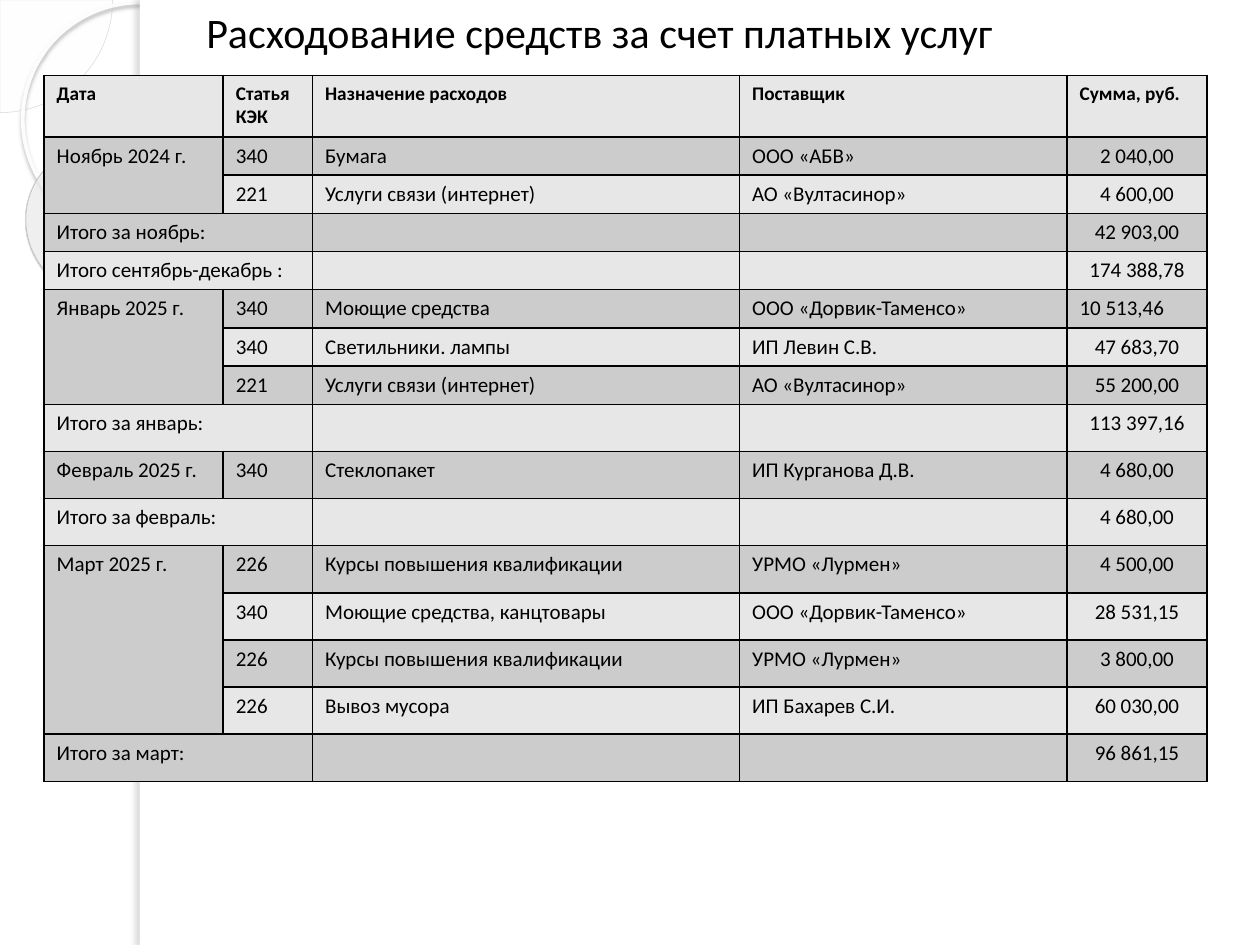
from lxml import etree
from pptx import Presentation
from pptx import util as u
from pptx.dml.color import RGBColor
from pptx.enum import shapes, text
from pptx.oxml import parse_xml
from pptx.oxml.ns import nsdecls, qn

COLORS = {
    "black": "000000", "white": "FFFFFF", "band_light": "E7E7E7", "band_dark": "CCCCCC",
    "pie": "FEFEFE", "pie_line": "D4D4D4", "ring": "FCFCFC", "ring_shadow": "B7B7B7",
    "donut_inner": "FDFDFD", "donut_outer": "DBDBDB", "donut_line": "C7C7C7",
    "donut_shadow": "5B5B5B", "edge_shadow": "7B7B7B",
}
FONT = "Calibri"
COLUMN_WIDTHS = [3.61, 1.8, 8.61, 6.6, 2.82]
HEADER_HEIGHT, LOW_ROW, TALL_ROW = 1.24, 0.77, 0.95
LOW_ROW_COUNT = 7

HEADINGS = ["Дата", "Статья КЭК", "Назначение расходов", "Поставщик", "Сумма, руб."]
# An empty date continues the month above; a pair is a total row.
EXPENSES = [
    ("Ноябрь 2024 г.", "340", "Бумага", "ООО «АБВ»", "2 040,00"),
    ("", "221", "Услуги связи (интернет)", "АО «Вултасинор»", "4 600,00"),
    ("Итого за ноябрь:", "42 903,00"),
    ("Итого сентябрь-декабрь :", "174 388,78"),
    ("Январь 2025 г.", "340", "Моющие средства", "ООО «Дорвик-Таменсо»", "10 513,46"),
    ("", "340", "Светильники. лампы", "ИП Левин С.В.", "47 683,70"),
    ("", "221", "Услуги связи (интернет)", "АО «Вултасинор»", "55 200,00"),
    ("Итого за январь:", "113 397,16"),
    ("Февраль 2025 г.", "340", "Стеклопакет", "ИП Курганова Д.В.", "4 680,00"),
    ("Итого за февраль:", "4 680,00"),
    ("Март 2025 г.", "226", "Курсы повышения квалификации", "УРМО «Лурмен»", "4 500,00"),
    ("", "340", "Моющие средства, канцтовары", "ООО «Дорвик-Таменсо»", "28 531,15"),
    ("", "226", "Курсы повышения квалификации", "УРМО «Лурмен»", "3 800,00"),
    ("", "226", "Вывоз мусора", "ИП Бахарев С.И.", "60 030,00"),
    ("Итого за март:", "96 861,15"),
]
LEFT_ALIGNED_SUM = "10 513,46"


def rgb(name):
    return RGBColor.from_string(COLORS[name])


def write(frame, words, size=12, bold=False, align=text.PP_ALIGN.LEFT):
    para = frame.paragraphs[0]
    para.alignment = align
    para.font.size = u.Pt(size)
    if words:
        span = para.add_run()
        span.text = words
        span.font.name, span.font.size, span.font.bold = FONT, u.Pt(size), bold
        span.font.color.rgb = rgb("black")
    else:
        mark = etree.SubElement(para._p, qn("a:endParaRPr"))
        mark.set("sz", str(size * 100))


def add_figure(page, kind, box, fill=None, alpha=100, line=None, width=0, adjust=()):
    left, top, wide, high = map(u.Cm, box)
    shape = page.shapes.add_shape(kind, left, top, wide, high)
    shape.shadow.inherit = False
    for index, value in enumerate(adjust):
        shape.adjustments[index] = value
    if fill:
        shape.fill.solid()
        shape.fill.fore_color.rgb = rgb(fill)
        color = shape.fill._xPr.find(qn("a:solidFill"))[0]
        etree.SubElement(color, qn("a:alpha")).set("val", str(alpha * 1000))
    else:
        shape.fill.background()
    if line:
        shape.line.color.rgb = rgb(line)
        shape.line.width = u.Pt(width)
    else:
        shape.line.fill.background()
    return shape


def cast_shadow(shape, color, alpha, blur, distance, angle):
    effects = shape._element.spPr.find(qn("a:effectLst"))
    effects.append(parse_xml(
        f'<a:outerShdw {nsdecls("a")} blurRad="{u.Pt(blur)}" dist="{u.Pt(distance)}" '
        f'dir="{angle * 60000}" algn="tl" rotWithShape="0"><a:srgbClr val="{COLORS[color]}">'
        f'<a:alpha val="{alpha * 1000}"/></a:srgbClr></a:outerShdw>'))


def fill_radially(shape, stops):
    marks = "".join(
        f'<a:gs pos="{place * 1000}"><a:srgbClr val="{COLORS[color]}">'
        f'<a:alpha val="{alpha * 1000}"/></a:srgbClr></a:gs>' for place, color, alpha in stops)
    gradient = parse_xml(
        f'<a:gradFill {nsdecls("a")} rotWithShape="1"><a:gsLst>{marks}</a:gsLst>'
        '<a:path path="circle"><a:fillToRect l="-408000" t="-50000" r="508000" b="150000"/>'
        '</a:path></a:gradFill>')
    properties = shape._element.spPr
    properties.replace(properties.find(qn("a:noFill")), gradient)


def add_backdrop(page, box):
    """Circles in the top left corner, partly under a white sheet with a soft edge."""
    left, top, width, height = box
    kinds = shapes.MSO_SHAPE
    radius, sheet = 2.27, 2.82
    add_figure(page, kinds.PIE, (left - radius, top - radius, 2 * radius, 2 * radius),
               fill="pie", alpha=33, line="pie_line", width=0.25, adjust=(0, 54.02))
    ring = add_figure(page, kinds.OVAL, (left + 0.46, top + 0.05, 4.72, 4.72),
                      line="ring", width=2.15)
    cast_shadow(ring, "ring_shadow", 85, 2, 2, 90)
    donut = add_figure(page, kinds.DONUT, (left + 0.51, top + 2.92, 3.12, 3.07),
                       line="donut_line", width=0.58, adjust=(0.12,))
    donut.rotation = 38.6
    fill_radially(donut, [(0, "donut_inner", 70), (70, "white", 55), (100, "donut_outer", 60)])
    cast_shadow(donut, "donut_shadow", 35, 1, 1.2, 75)
    add_figure(page, kinds.RECTANGLE, (left + sheet, top, width - sheet, height), fill="white")
    edge = add_figure(page, kinds.RECTANGLE, (left + sheet, top, 0.2, height), fill="white")
    cast_shadow(edge, "edge_shadow", 25, 3, 3, 180)


def add_title(page, box, words):
    frame = page.shapes.add_textbox(*map(u.Cm, box)).text_frame
    frame.word_wrap = True
    frame.vertical_anchor = text.MSO_ANCHOR.MIDDLE
    write(frame, words, size=24)


def style_cell(cell, fill):
    cell.fill.solid()
    cell.fill.fore_color.rgb = rgb(fill)
    for index, side in enumerate(("lnL", "lnR", "lnT", "lnB")):
        border = parse_xml(
            f'<a:{side} {nsdecls("a")} w="{u.Pt(1)}"><a:solidFill>'
            f'<a:srgbClr val="{COLORS["black"]}"/></a:solidFill></a:{side}>')
        cell._tc.get_or_add_tcPr().insert(index, border)


def merge_months(table):
    last = len(EXPENSES)
    for row in range(last, 0, -1):
        if EXPENSES[row - 1][0]:
            if last > row:
                table.cell(row, 0).merge(table.cell(last, 0))
            last = row - 1


def add_expense_table(page, box):
    tall_count = len(EXPENSES) - LOW_ROW_COUNT
    heights = [HEADER_HEIGHT] + [LOW_ROW] * LOW_ROW_COUNT + [TALL_ROW] * tall_count
    left, top = map(u.Cm, box)
    table = page.shapes.add_table(len(heights), len(COLUMN_WIDTHS), left, top,
                                  u.Cm(sum(COLUMN_WIDTHS)), u.Cm(sum(heights))).table
    for column, width in zip(table.columns, COLUMN_WIDTHS):
        column.width = u.Cm(width)
    for number, (height, entry) in enumerate(zip(heights, [HEADINGS] + EXPENSES)):
        table.rows[number].height = u.Cm(height)
        is_total = len(entry) == 2
        values = (entry[0], "", "", "", entry[1]) if is_total else entry
        for place, value in enumerate(values):
            cell = table.cell(number, place)
            style_cell(cell, "band_dark" if number % 2 else "band_light")
            centred = number > 0 and place == 4 and value != LEFT_ALIGNED_SUM
            write(cell.text_frame, value, size=12 if number else 11, bold=number == 0,
                  align=text.PP_ALIGN.CENTER if centred else text.PP_ALIGN.LEFT)
        if is_total:
            table.cell(number, 0).merge(table.cell(number, 1))
    merge_months(table)


def main():
    deck = Presentation()
    deck.slide_width, deck.slide_height = u.Cm(25.4), u.Cm(19.05)
    page = deck.slides.add_slide(deck.slide_layouts[6])
    add_backdrop(page, (0, 0, 25.4, 19.05))
    add_title(page, (3.91, 0.05, 20.83, 1.17), "Расходование средств за счет платных услуг")
    add_expense_table(page, (0.89, 1.52))
    deck.save("out.pptx")


if __name__ == "__main__":
    main()
